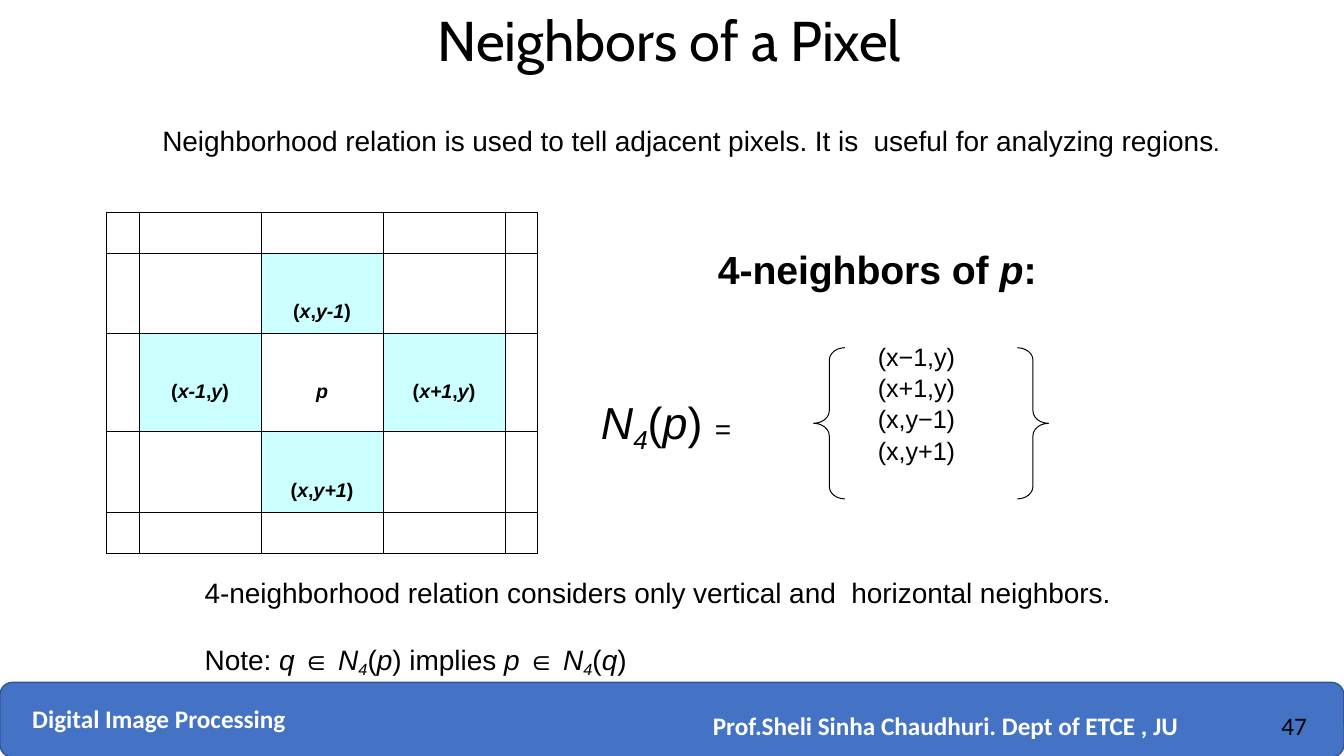
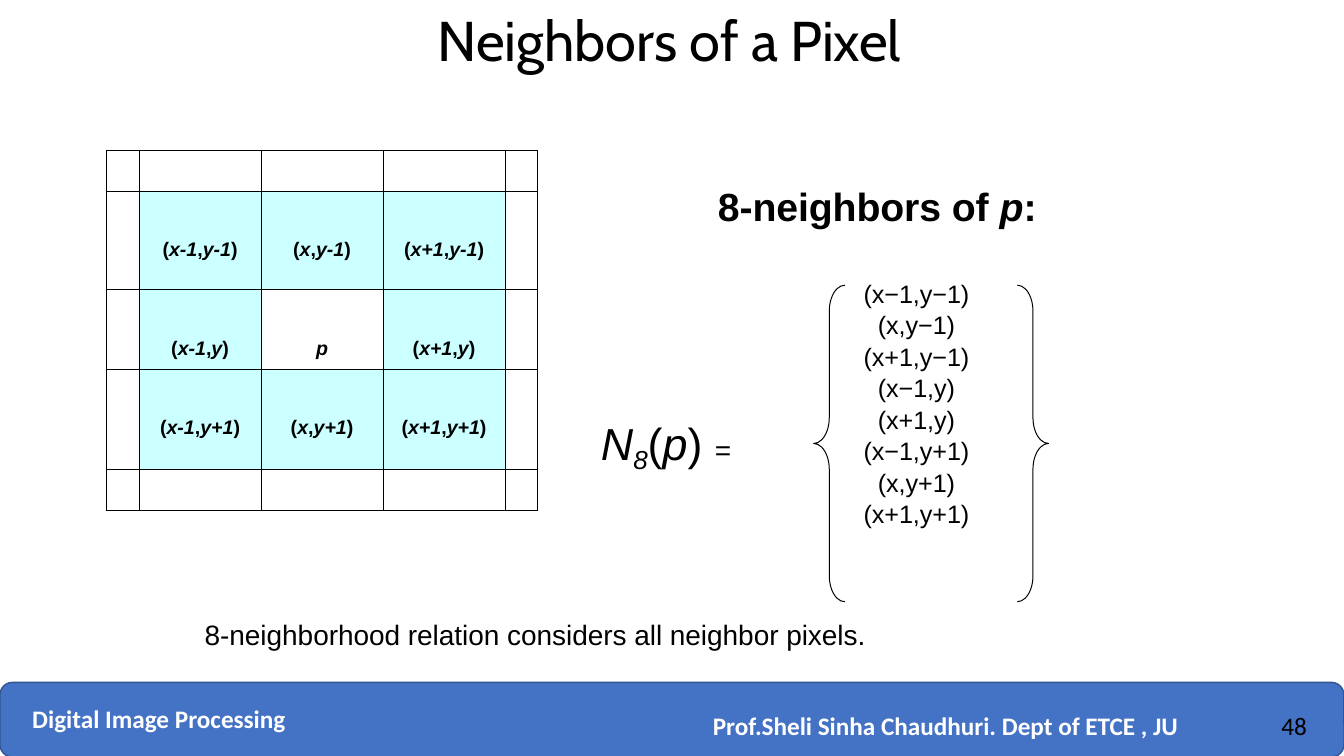
from dataclasses import dataclass

from lxml import etree
from pptx import Presentation
from pptx.dml.color import RGBColor
from pptx.enum.shapes import MSO_SHAPE
from pptx.enum.text import MSO_ANCHOR, MSO_AUTO_SIZE, PP_ALIGN
from pptx.oxml.ns import qn
from pptx.util import Inches, Pt

ROUND_RECT = MSO_SHAPE.ROUNDED_RECTANGLE
LEFT_BRACE, RIGHT_BRACE = MSO_SHAPE.LEFT_BRACE, MSO_SHAPE.RIGHT_BRACE
LEFT, CENTER = PP_ALIGN.LEFT, PP_ALIGN.CENTER
TOP = MSO_ANCHOR.TOP
NO_FIT = MSO_AUTO_SIZE.NONE
TITLE_ONLY = 5


@dataclass(frozen=True)
class Theme:
    ink: RGBColor = RGBColor(0, 0, 0)
    white: RGBColor = RGBColor(255, 255, 255)
    band: RGBColor = RGBColor(0x44, 0x72, 0xC4)
    band_line: RGBColor = RGBColor(0x32, 0x54, 0x91)
    neighbor: RGBColor = RGBColor(0xCC, 0xFF, 0xFF)
    title_font: str = "Cabin"
    body_font: str = "Arial"
    footer_font: str = "Calibri"
    title: int = 40
    formula: int = 32
    heading: int = 28
    body: int = 20
    small: int = 18
    cell: int = 14
    grid_line: float = 0.75


class Deck:
    """Holds the presentation, its theme and the current slide."""

    def __init__(self):
        self.theme = Theme()
        self.prs = Presentation()
        self.prs.slide_width = Inches(13.33)
        self.prs.slide_height = Inches(7.5)
        self.s = None

    def slide(self, title, number):
        t = self.theme
        self.s = self.prs.slides.add_slide(self.prs.slide_layouts[TITLE_ONLY])
        sp = self.s.shapes.title
        sp.left, sp.top = Inches(0.11), Inches(0.03)
        sp.width, sp.height = Inches(13.06), Inches(0.96)
        self.frame(sp.text_frame)
        self.rich_text(sp.text_frame.paragraphs[0], title, t.title,
                       font=t.title_font, align=CENTER)
        self.footer(number)

    def footer(self, number):
        t = self.theme
        band = self.shape(ROUND_RECT, 0, 6.77, 13.33, 0.74, t.band_line, 1)
        band.fill.solid()
        band.fill.fore_color.rgb = t.band
        for text, x, y, w, color, bold in (
                ("Digital Image Processing", 0.32, 6.96, 3, t.white, True),
                ("Prof.Sheli Sinha Chaudhuri. Dept of ETCE , JU",
                 7.07, 7.03, 5, t.white, True),
                (str(number), 12.71, 7.03, 0.5, t.ink, False)):
            self.text([text], x, y, w, 0.35, t.small,
                      font=t.footer_font, color=color, bold=bold, spacing=0)

    def shape(self, kind, x, y, w, h, line, line_width):
        sp = self.s.shapes.add_shape(
            kind, Inches(x), Inches(y), Inches(w), Inches(h))
        sp.shadow.inherit = False
        sp.line.color.rgb = line
        sp.line.width = Pt(line_width)
        return sp

    def frame(self, tf):
        tf.word_wrap = True
        tf.auto_size = NO_FIT
        tf.vertical_anchor = TOP
        tf.margin_left = tf.margin_right = tf.margin_bottom = 0
        tf.margin_top = Inches(0.02)

    def rich_text(self, p, markup, size, font=None, color=None, bold=False,
                  align=LEFT, spacing=-5):
        """Add text in which * toggles italic and _ toggles subscript."""
        p.alignment = align
        for i, part in enumerate(markup.split("*")):
            for j, piece in enumerate(part.split("_")):
                if piece:
                    r = self.run(p, piece, size, font, color, bold, spacing)
                    r.font.italic = i % 2 == 1
                    if j % 2:
                        r._r.get_or_add_rPr().set("baseline", "-21000")

    def run(self, p, text, size, font=None, color=None, bold=False, spacing=0):
        r = p.add_run()
        r.text = text
        r.font.name = font or self.theme.body_font
        r.font.size = Pt(size)
        r.font.bold = bold
        r.font.color.rgb = color or self.theme.ink
        r._r.get_or_add_rPr().set("spc", str(spacing))
        return r

    def text(self, lines, x, y, w, h, size, gap=0, line_spacing=None, **style):
        box = self.s.shapes.add_textbox(
            Inches(x), Inches(y), Inches(w), Inches(h))
        tf = box.text_frame
        self.frame(tf)
        for i, line in enumerate(lines):
            p = tf.add_paragraph() if i else tf.paragraphs[0]
            if i and gap:
                p.space_before = Pt(gap)
            if line_spacing:
                p.line_spacing = line_spacing
            self.rich_text(p, line, size, **style)
        return tf

    def border(self, cell):
        tc_pr = cell._tc.get_or_add_tcPr()
        for side in ("lnL", "lnR", "lnT", "lnB"):
            ln = etree.SubElement(tc_pr, qn(f"a:{side}"),
                                  w=str(Pt(self.theme.grid_line)))
            fill = etree.SubElement(ln, qn("a:solidFill"))
            etree.SubElement(fill, qn("a:srgbClr"), val=str(self.theme.ink))

    def pixel_grid(self, top, heights, labels):
        """Draw the 3 x 3 pixels around p with a rim of cut-off pixels."""
        widths = [0.32, 1.21, 1.21, 1.21, 0.32]
        table = self.s.shapes.add_table(
            len(heights), len(widths), Inches(1.06), Inches(top),
            Inches(sum(widths)), Inches(sum(heights))).table
        table.first_row = table.horz_banding = False
        for column, width in zip(table.columns, widths):
            column.width = Inches(width)
        for i, height in enumerate(heights):
            table.rows[i].height = Inches(height)
            for j in range(len(widths)):
                cell = table.cell(i, j)
                self.border(cell)
                label = labels.get((i, j))
                if label in (None, "*p*"):
                    cell.fill.background()
                else:
                    cell.fill.solid()
                    cell.fill.fore_color.rgb = self.theme.neighbor
                if label:
                    cell.margin_top = Inches(0.47)
                    self.rich_text(cell.text_frame.paragraphs[0], label,
                                   self.theme.cell, bold=True, align=CENTER)

    def brace(self, kind, x, y, h, curve):
        sp = self.shape(kind, x, y, 0.31, h, self.theme.ink, 0.71)
        sp.fill.background()
        sp.adjustments[0] = curve

    def neighborhood(self, top, heights, labels, members, brace_height, curve):
        """Draw the pixel grid and, beside it, the set of neighbors."""
        t = self.theme
        n = len(members)
        brace_top = top + 1.34
        self.pixel_grid(top, heights, labels)
        self.text([f"{n}-neighbors of *p*:"], 7.12, top + 0.3, 4.28, 0.48,
                  t.heading, bold=True)
        tf = self.text([f"*N_{n}_*(*p*) "], 5.96,
                       brace_top + brace_height / 2 - 0.3, 1.8, 0.6, t.formula)
        self.run(tf.paragraphs[0], "=", t.body)
        self.brace(LEFT_BRACE, 8.07, brace_top, brace_height, curve)
        self.brace(RIGHT_BRACE, 10.09, brace_top, brace_height, curve)
        self.text(members, 8.39, brace_top - 0.1, 1.4, 0.3 * n, t.small,
                  line_spacing=1.04, align=CENTER)


def pixel_labels(diagonal):
    """Map grid cells to labels, with or without the diagonal neighbors."""
    offsets = ("-1", "", "+1")
    labels = {}
    for i, dy in enumerate(offsets, 1):
        for j, dx in enumerate(offsets, 1):
            if diagonal or not (dx and dy):
                labels[i, j] = f"(*x{dx}*,*y{dy}*)" if dx or dy else "*p*"
    return labels


def main():
    deck = Deck()
    t = deck.theme

    deck.slide("Neighbors of a Pixel", 47)
    tf = deck.text(["Neighborhood relation is used to tell adjacent pixels. "
                    "It is  useful for analyzing regions"],
                   1.61, 1.2, 11, 0.61, t.body)
    deck.run(tf.paragraphs[0], ".", t.small)
    deck.neighborhood(
        2.11, [0.4, 0.79, 0.98, 0.8, 0.4], pixel_labels(diagonal=False),
        ["(x−1,y)", "(x+1,y)", "(x,y−1)", "(x,y+1)"], 1.5, 0.4)
    deck.text(["4-neighborhood relation considers only vertical and  "
               "horizontal neighbors.",
               "Note: *q* ∈ *N_4_*(*p*) implies *p* ∈ *N_4_*(*q*)"],
              2.03, 5.69, 9.66, 1.07, t.body, gap=23.5)

    deck.slide("Neighbors of a Pixel", 48)
    deck.neighborhood(
        1.49, [0.4, 0.98, 0.79, 0.99, 0.4], pixel_labels(diagonal=True),
        ["(x−1,y−1)", "(x,y−1)", "(x+1,y−1)", "(x−1,y)",
         "(x+1,y)", "(x−1,y+1)", "(x,y+1)", "(x+1,y+1)"], 3.14, 0.83)
    deck.text(["8-neighborhood relation considers all neighbor pixels."],
              2.03, 6.11, 7.92, 0.35, t.body)

    deck.prs.save("out.pptx")


if __name__ == "__main__":
    main()
